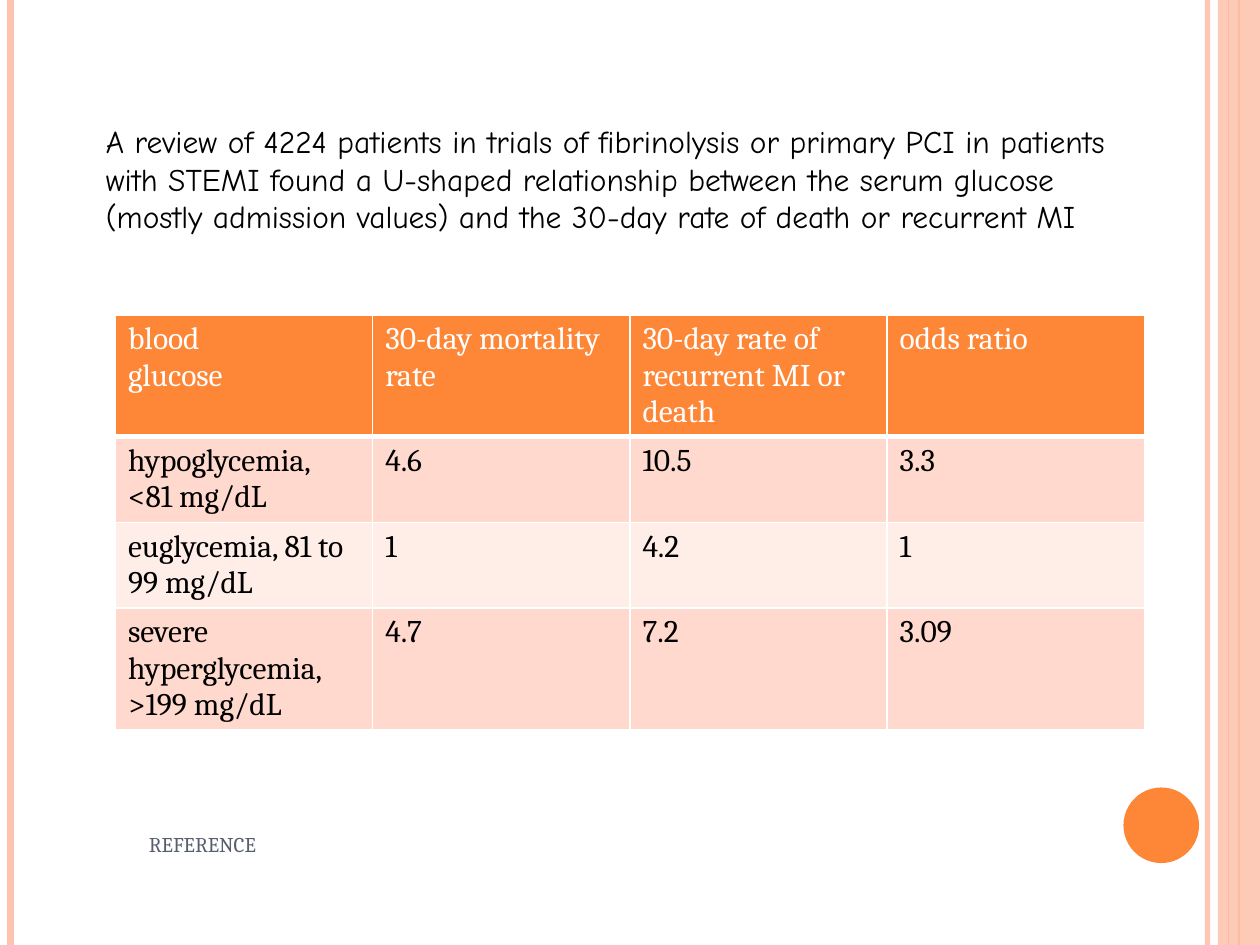
from lxml import etree
from pptx import Presentation
from pptx.dml.color import RGBColor
from pptx.enum.shapes import MSO_CONNECTOR, MSO_SHAPE
from pptx.enum.text import MSO_ANCHOR, MSO_AUTO_SIZE, PP_ALIGN
from pptx.oxml.ns import qn
from pptx.util import Pt

STRAIGHT = MSO_CONNECTOR.STRAIGHT
RECTANGLE, OVAL = MSO_SHAPE.RECTANGLE, MSO_SHAPE.OVAL
TOP, MIDDLE = MSO_ANCHOR.TOP, MSO_ANCHOR.MIDDLE
LEFT = PP_ALIGN.LEFT
NO_AUTOFIT = MSO_AUTO_SIZE.NONE
TITLE_ONLY = 5
PAGE_WIDTH, PAGE_HEIGHT = 720, 540

COLORS = {
    "orange": "FE8637",
    "peach": "FEC3AE",
    "band_dark": "FFD9CE",
    "band_light": "FFEDE8",
    "white": "FFFFFF",
    "black": "000000",
    "slate": "575F6D",
}
HEADING = {"name": "Comic Neue", "size": Pt(18), "bold": False}
TABLE_TEXT = {"name": "Cambria", "size": Pt(18), "bold": False}
FOOTNOTE = {"name": "Cambria", "size": Pt(12)}

STRIPES = [
    (690, "peach", 3, 93),
    (6, "peach", 4.5, 100),
    (708, "orange", 1.5, 100),
    (702, "orange", 0.75, 100),
]
TITLE = (
    "A review of 4224 patients in trials of fibrinolysis or primary PCI in patients "
    "with STEMI found a U-shaped relationship between the serum glucose "
    "(mostly admission values) and the 30-day rate of death or recurrent MI"
)
ROWS = [
    ["blood\nglucose", "30-day mortality rate",
     "30-day rate of recurrent MI or death", "odds ratio"],
    ["hypoglycemia, <81 mg/dL", "4.6", "10.5", "3.3"],
    ["euglycemia, 81 to 99 mg/dL", "1", "4.2", "1"],
    ["severe hyperglycemia, >199 mg/dL", "4.7", "7.2", "3.09"],
]
ROW_HEIGHTS = [69, 49, 49, 69]
COLUMN_WIDTH = 147


def rgb(color):
    """Return the named colour."""
    return RGBColor.from_string(COLORS[color])


def set_alpha(shape, percent):
    """Make the colours of a shape partly transparent."""
    for color in shape.element.spPr.iter(qn("a:srgbClr")):
        etree.SubElement(color, qn("a:alpha"), val=str(percent * 1000))


def write_text(frame, text, style, color):
    """Fill a text frame with left-aligned, formatted paragraphs."""
    frame.text = text
    for paragraph in frame.paragraphs:
        paragraph.alignment = LEFT
        for span in paragraph.runs:
            for name, value in style.items():
                setattr(span.font, name, value)
            span.font.color.rgb = rgb(color)


def place_text(box, bounds, text, style, color, anchor):
    """Position a text holder and write its wrapped text."""
    box.left, box.top, box.width, box.height = map(Pt, bounds)
    frame = box.text_frame
    settings = {"word_wrap": True, "auto_size": NO_AUTOFIT, "vertical_anchor": anchor}
    for name, value in settings.items():
        setattr(frame, name, value)
    write_text(frame, text, style, color)


def add_stripe(page, x, color, width, opacity):
    """Draw a vertical line over the whole page height."""
    stripe = page.shapes.add_connector(STRAIGHT, Pt(x), Pt(0), Pt(x), Pt(PAGE_HEIGHT))
    stripe.line.color.rgb = rgb(color)
    stripe.line.width = Pt(width)
    if opacity < 100:
        set_alpha(stripe, opacity)
    etree.SubElement(stripe.element.spPr, qn("a:effectLst"))


def add_block(page, kind, bounds, color):
    """Draw a plain filled shape and return it."""
    block = page.shapes.add_shape(kind, *map(Pt, bounds))
    block.shadow.inherit = False
    block.fill.solid()
    block.fill.fore_color.rgb = rgb(color)
    block.line.fill.background()
    return block


def set_borders(cell, widths):
    """Give a cell white borders, with widths keyed by side."""
    properties = cell._tc.get_or_add_tcPr()
    for index, (side, width) in enumerate(widths.items()):
        line = etree.Element(qn(f"a:ln{side}"), w=str(Pt(width)))
        fill = etree.SubElement(line, qn("a:solidFill"))
        etree.SubElement(fill, qn("a:srgbClr"), val=COLORS["white"])
        properties.insert(index, line)


def add_glucose_table(page, left, top):
    """Add the banded table of outcomes by blood glucose."""
    columns = len(ROWS[0])
    table = page.shapes.add_table(
        len(ROWS), columns, Pt(left), Pt(top),
        Pt(columns * COLUMN_WIDTH), Pt(sum(ROW_HEIGHTS))).table
    for column in table.columns:
        column.width = Pt(COLUMN_WIDTH)
    for r, values in enumerate(ROWS):
        table.rows[r].height = Pt(ROW_HEIGHTS[r])
        band = "orange" if r == 0 else "band_dark" if r % 2 else "band_light"
        widths = {"L": 1, "R": 1, "T": 3 if r == 1 else 1, "B": 3 if r == 0 else 1}
        for c, value in enumerate(values):
            cell = table.cell(r, c)
            cell.fill.solid()
            cell.fill.fore_color.rgb = rgb(band)
            set_borders(cell, widths)
            write_text(cell.text_frame, value, TABLE_TEXT, "black" if r else "white")


def main():
    """Build and save the slide."""
    deck = Presentation()
    deck.slide_width, deck.slide_height = Pt(PAGE_WIDTH), Pt(PAGE_HEIGHT)
    page = deck.slides.add_slide(deck.slide_layouts[TITLE_ONLY])
    for stripe in STRIPES:
        add_stripe(page, *stripe)
    set_alpha(add_block(page, RECTANGLE, (696, 0, 24, PAGE_HEIGHT), "peach"), 87)
    add_block(page, OVAL, (642, 450, 43.2, 43.2), "orange")
    add_glucose_table(page, 66, 180)
    footnote = page.shapes.add_textbox(0, 0, 0, 0)
    place_text(footnote, (78, 468, 252, 29), "REFERENCE", FOOTNOTE, "slate", MIDDLE)
    place_text(page.shapes.title, (53.3, 66, 600, 94), TITLE, HEADING, "black", TOP)
    deck.save("out.pptx")


if __name__ == "__main__":
    main()
